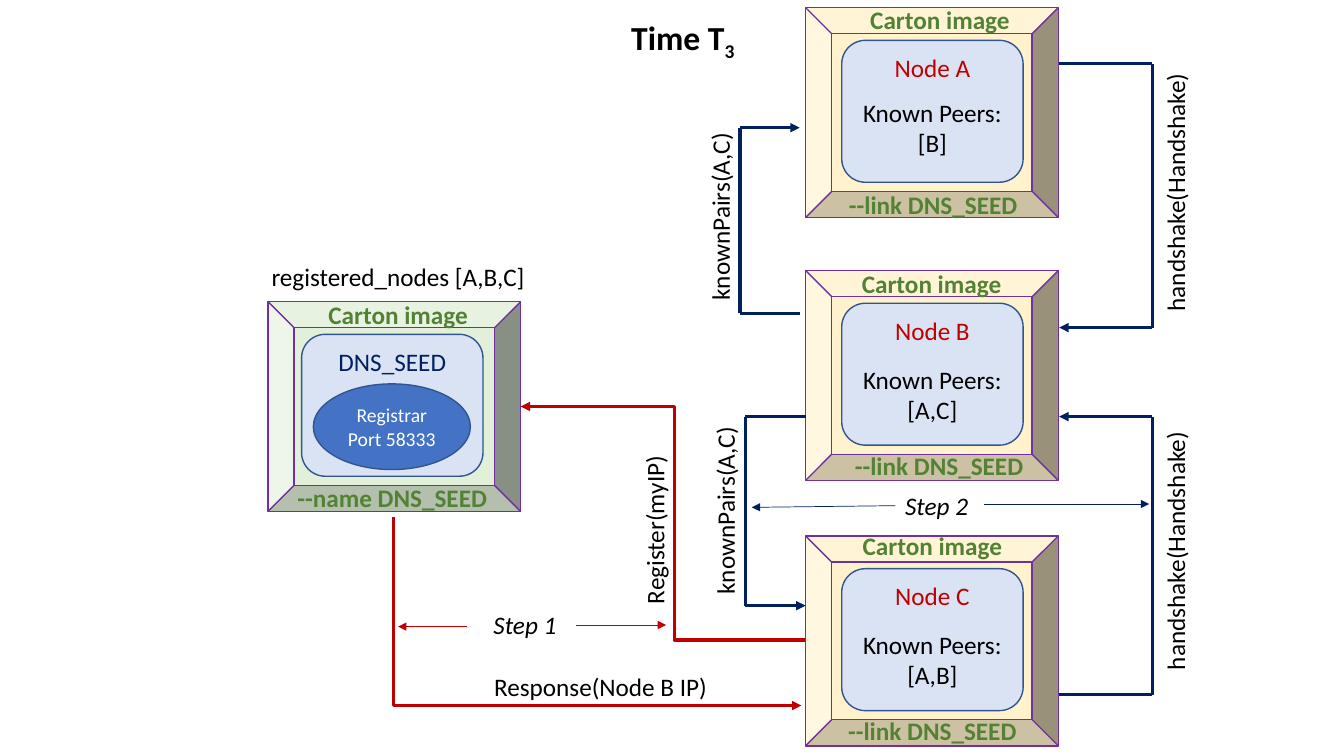
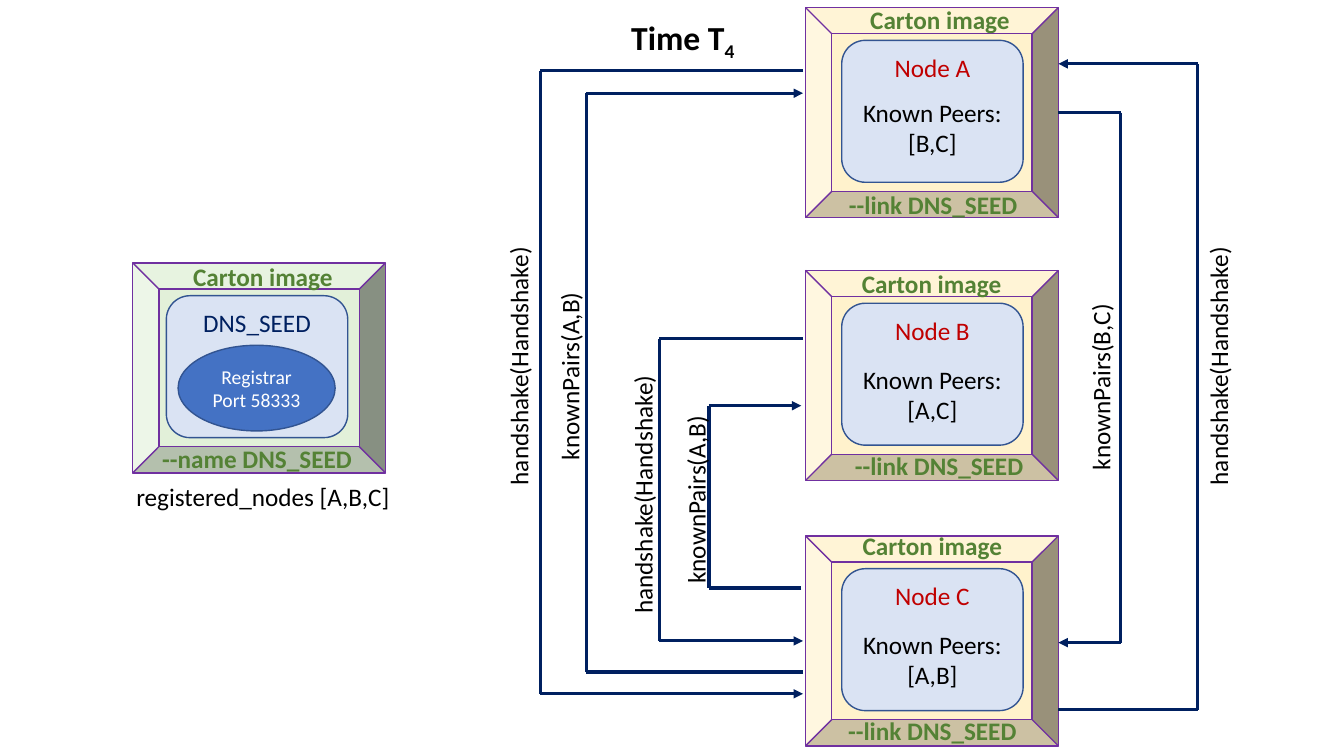
from dataclasses import dataclass

from lxml import etree
from pptx import Presentation
from pptx import util as u
from pptx.dml.color import RGBColor
from pptx.enum import shapes, text
from pptx.oxml import ns

COLUMNS, ROWS = 160, 90
SLIDE_WIDTH, SLIDE_HEIGHT = u.Inches(13.33), u.Inches(7.5)
FONT = "Calibri"
BODY_SIZE, TITLE_SIZE, SMALL_SIZE = 18, 24, 14
HEAVY, THIN = 2.25, 0.5

BLACK = RGBColor(0x00, 0x00, 0x00)
WHITE = RGBColor(0xFF, 0xFF, 0xFF)
RED = RGBColor(0xC0, 0x00, 0x00)
NAVY = RGBColor(0x00, 0x20, 0x60)
GREEN = RGBColor(0x54, 0x82, 0x35)
PURPLE = RGBColor(0x70, 0x30, 0xA0)
BLUE = RGBColor(0x44, 0x72, 0xC4)
OUTLINE = RGBColor(0x32, 0x54, 0x91)
PALE_BLUE = RGBColor(0xDA, 0xE3, 0xF3)
PALE_YELLOW = RGBColor(0xFF, 0xF2, 0xCC)
PALE_GREEN = RGBColor(0xE2, 0xF0, 0xD9)

BOX_WIDTH, BOX_HEIGHT = 30.1, 25
NODE_LEFT = 95.9
SHAKE, PAIRS = "handshake(Handshake)", "knownPairs({})"
SHAKE_WIDTH, PAIRS_WIDTH = 31.8, 22.6


@dataclass
class Node:
    name: str
    top: float
    heading: tuple
    peers_row: float
    footer: tuple


NODES = [
    Node("Node A", 0.9, (16, 1.4), 14.3, (15.2, 23.5)),
    Node("Node B", 32.2, (15, 1.6), 14.8, (15.9, 23.2)),
    Node("Node C", 63.8, (15.1, 1.2), 14.8, (15.1, 23.2)),
]


def across(columns):
    return round(SLIDE_WIDTH * columns / COLUMNS)


def down(rows):
    return round(SLIDE_HEIGHT * rows / ROWS)


def write(frame, lines, size, color, bold=False, italic=False):
    frame.text = "\n".join(lines)
    for para in frame.paragraphs:
        para.alignment = text.PP_ALIGN.CENTER
        for span in para.runs:
            font = span.font
            font.name, font.size = FONT, u.Pt(size)
            font.bold, font.italic = bold, italic
            font.color.rgb = color


def add_label(parent, words, column, row, width, color=BLACK, size=BODY_SIZE,
              height=4.8, bold=False, italic=False, upward=False):
    label = parent.shapes.add_textbox(
        across(column - width / 2), down(row - height / 2), across(width), down(height))
    label.text_frame.word_wrap = False
    write(label.text_frame, words.split("\n"), size, color, bold, italic)
    if upward:
        label.rotation = 270
    return label


def add_panel(parent, kind, left, top, width, height, fill, outline):
    panel = parent.shapes.add_shape(
        kind, across(left), down(top), across(width), down(height))
    panel.shadow.inherit = False
    panel.fill.solid()
    panel.fill.fore_color.rgb = fill
    panel.line.color.rgb = outline
    panel.line.width = u.Pt(1)
    return panel


def add_line(parent, begin, end, color, weight=HEAVY, arrow=True,
             kind=shapes.MSO_CONNECTOR.STRAIGHT):
    line = parent.shapes.add_connector(
        kind, across(begin[0]), down(begin[1]), across(end[0]), down(end[1]))
    line.line.color.rgb = color
    line.line.width = u.Pt(weight)
    if arrow:
        tail = etree.SubElement(line.line._get_or_add_ln(), ns.qn("a:tailEnd"))
        tail.set("type", "triangle")
    etree.SubElement(line._element.spPr, ns.qn("a:effectLst"))
    return line


def add_bracket(page, edge, start, spine, finish):
    group = page.shapes.add_group_shape()
    points = [(edge, start), (spine, start), (spine, finish), (edge, finish)]
    for index, (begin, end) in enumerate(zip(points, points[1:])):
        add_line(group, begin, end, NAVY, arrow=index == 2)


def add_elbow(page, begin, end, color, bend):
    elbow = add_line(page, begin, end, color, kind=shapes.MSO_CONNECTOR.ELBOW)
    guides = elbow._element.spPr.find(ns.qn("a:prstGeom")).get_or_add_avLst()
    guide = etree.SubElement(guides, ns.qn("a:gd"))
    guide.set("name", "adj1")
    guide.set("fmla", f"val {round(bend * 100000)}")


def add_corner(page, begin, end, color):
    middle_column, middle_row = (begin[0] + end[0]) / 2, (begin[1] + end[1]) / 2
    half_width, half_height = (end[1] - begin[1]) / 2, (end[0] - begin[0]) / 2
    corner = add_line(
        page, (middle_column + half_width, middle_row - half_height),
        (middle_column - half_width, middle_row + half_height),
        color, kind=shapes.MSO_CONNECTOR.ELBOW)
    properties = corner._element.spPr
    properties.find(ns.qn("a:xfrm")).set("rot", str(270 * 60000))
    properties.find(ns.qn("a:prstGeom")).set("prst", "bentConnector2")


def add_container(page, left, top, fill, name, name_color, inset, heading, footer,
                  footer_words, footer_width):
    group = page.shapes.add_group_shape()
    add_panel(group, shapes.MSO_SHAPE.BEVEL, left, top, BOX_WIDTH, BOX_HEIGHT, fill, PURPLE)
    card = add_panel(group, shapes.MSO_SHAPE.ROUNDED_RECTANGLE, left + inset, top + 3.9,
                     21.6, 16.9, PALE_BLUE, OUTLINE)
    card.text_frame.vertical_anchor = text.MSO_ANCHOR.TOP
    write(card.text_frame, [name], BODY_SIZE, name_color)
    for words, (column, row), width in (("Carton image", heading, 19.4),
                                        (footer_words, footer, footer_width)):
        add_label(group, words, left + column, top + row, width, GREEN, bold=True)
    return group


def add_node(page, node, peers):
    group = add_container(page, NODE_LEFT, node.top, PALE_YELLOW, node.name, RED, 4.3,
                          node.heading, node.footer, "--link DNS_SEED", 22.7)
    add_label(group, f"Known Peers:\n[{peers}]", NODE_LEFT + 15.1,
              node.top + node.peers_row, 19.1, height=8.5)


def add_seed(page, left, top, caption_row):
    group = add_container(page, left, top, PALE_GREEN, "DNS_SEED", NAVY, 4,
                          (15.5, 1.6), (14.8, 23.3), "--name DNS_SEED", 25.2)
    registrar = add_panel(group, shapes.MSO_SHAPE.OVAL, left + 5.4, top + 9.8,
                          18.7, 10.2, BLUE, OUTLINE)
    frame = registrar.text_frame
    frame.margin_left = frame.margin_right = 0
    frame.vertical_anchor = text.MSO_ANCHOR.MIDDLE
    write(frame, ["Registrar", "Port 58333"], SMALL_SIZE, WHITE)
    add_label(page, "registered_nodes [A,B,C]", left + 15.5, top + caption_row, 32.9)


def add_title(page, moment):
    title = add_label(page, "Time T", 81.3, 4.4, 15, size=TITLE_SIZE, height=6, bold=True)
    para = title.text_frame.paragraphs[0]
    span = para.add_run()
    span.text = moment
    font = span.font
    font.name, font.size, font.bold = FONT, u.Pt(TITLE_SIZE), True
    font.color.rgb = BLACK
    span._r.get_or_add_rPr().set("baseline", "-25000")


def add_calls(page, brackets, shakes, pairs):
    for bracket in brackets:
        add_bracket(page, *bracket)
    for column, row in shakes:
        add_label(page, SHAKE, column, row, SHAKE_WIDTH, upward=True)
    for peers, column, row in pairs:
        add_label(page, PAIRS.format(peers), column, row, PAIRS_WIDTH, upward=True)


def add_registration(page):
    add_elbow(page, (NODE_LEFT, 76.2), (62, 48.4), RED, 0.46)
    add_label(page, "Register(myIP)", 77.9, 63.1, 20.3, upward=True)
    add_corner(page, (46.8, 61.6), (95.4, 84), RED)
    add_label(page, "Response(Node B IP)", 71.5, 81.7, 28.1)


def add_step(page, words, column, row, color, arrows):
    add_label(page, words, column, row, 10, italic=True)
    for begin, end in arrows:
        add_line(page, begin, end, color, THIN)


def add_page(deck, moment, known, seed):
    page = deck.slides.add_slide(deck.slide_layouts[6])
    add_title(page, moment)
    for node, peers in zip(NODES, known):
        add_node(page, node, peers)
    add_seed(page, *seed)
    return page


def build_third_moment(deck):
    page = add_page(deck, "3", ["B", "A,C", "A,B"], (31.9, 35.9, -3))
    add_calls(
        page,
        [(126.1, 7.6, 137.2, 39), (126.1, 82.7, 137.2, 49.6),
         (95.9, 49.6, 88.7, 72.1), (95.2, 37.3, 88.1, 15.2)],
        [(139.9, 65.6), (139.9, 22.9)],
        [("A,C", 86.3, 60.8), ("A,C", 85.7, 25.8)])
    add_registration(page)
    add_step(page, "Step 1", 62.5, 74.4, RED,
             [((68.6, 74.4), (79.3, 74.4)), ((55.6, 74.6), (47.4, 74.6))])
    add_step(page, "Step 2", 111.5, 60.2, NAVY,
             [((117.2, 60), (136.8, 60)), ((106.6, 60.2), (89.5, 60.4))])


def build_fourth_moment(deck):
    page = add_page(deck, "4", ["B,C", "A,C", "A,B"], (15.8, 31.3, 27.8))
    add_calls(
        page,
        [(126, 84.5, 142.6, 7.6), (95.6, 80, 69.8, 11.1), (126, 13.4, 133.4, 76.5),
         (95.6, 8.4, 64.3, 82.6), (95.6, 40.3, 78.5, 76.3), (95.4, 70, 84.4, 48.3)],
        [(145, 43.6), (61.7, 43.6), (76.5, 58.9)],
        [("A,B", 67.8, 44.8), ("B,C", 131, 46.1), ("A,B", 82.8, 59.5)])


def main():
    deck = Presentation()
    deck.slide_width, deck.slide_height = SLIDE_WIDTH, SLIDE_HEIGHT
    build_third_moment(deck)
    build_fourth_moment(deck)
    deck.save("out.pptx")


if __name__ == "__main__":
    main()
